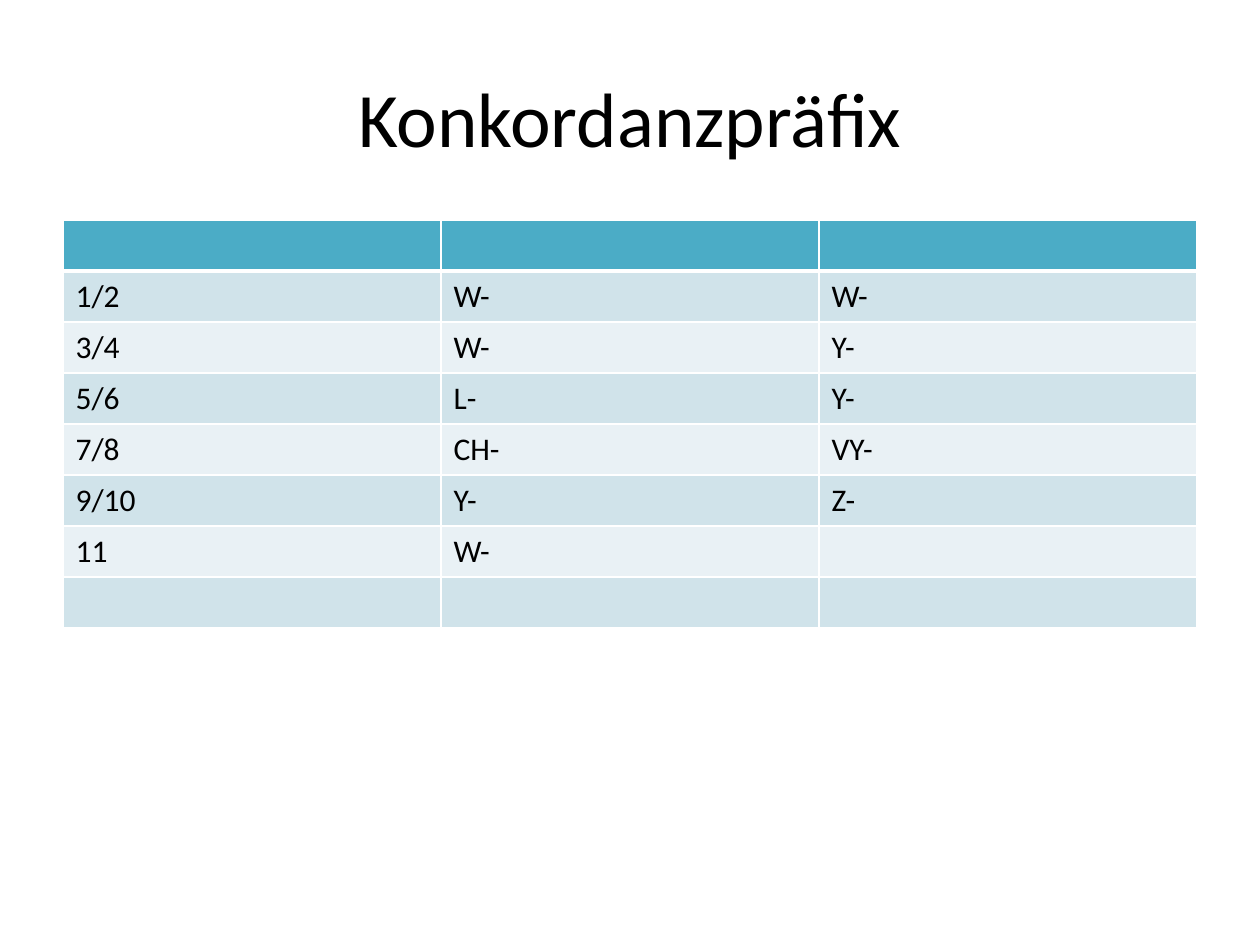
"""Build the slide "Konkordanzpräfix" with its table of concord prefixes."""
from lxml.etree import SubElement
from pptx import Presentation
from pptx.dml.color import RGBColor
from pptx.enum.text import MSO_ANCHOR, PP_ALIGN
from pptx.oxml.ns import qn
from pptx.util import Pt

PX = 914400 / 126


def write(frame, text, size=18, color="000000", align=PP_ALIGN.LEFT):
    paragraph = frame.paragraphs[0]
    paragraph.alignment = align
    run = paragraph.add_run()
    run.text = text
    run.font.name = "Calibri"
    run.font.size = Pt(size)
    run.font.bold = False
    run.font.color.rgb = RGBColor.from_string(color)


def border(cell, side, width, color="FFFFFF"):
    line = SubElement(cell._tc.get_or_add_tcPr(), qn(f"a:ln{side}"), w=str(Pt(width)))
    SubElement(SubElement(line, qn("a:solidFill")), qn("a:srgbClr"), val=color)


prefixes = [
    ("", "", ""),
    ("1/2", "W-", "W-"),
    ("3/4", "W-", "Y-"),
    ("5/6", "L-", "Y-"),
    ("7/8", "CH-", "VY-"),
    ("9/10", "Y-", "Z-"),
    ("11", "W-", ""),
    ("", "", ""),
]
bands = ["E9F1F5", "D0E3EA"]
row_height = 51

prs = Presentation()
prs.slide_width, prs.slide_height = round(1260 * PX), round(945 * PX)
slide = prs.slides.add_slide(prs.slide_layouts[6])

heading = slide.shapes.add_textbox(*(round(v * PX) for v in (63, 38, 1134, 158))).text_frame
heading.word_wrap = True
heading.vertical_anchor = MSO_ANCHOR.MIDDLE
write(heading, "Konkordanzpräfix", size=44, align=PP_ALIGN.CENTER)

table_box = [round(v * PX) for v in (63, 220, 1134, row_height * len(prefixes))]
concords = slide.shapes.add_table(len(prefixes), 3, *table_box).table
for r, entries in enumerate(prefixes):
    concords.rows[r].height = round(row_height * PX)
    for c, entry in enumerate(entries):
        cell = concords.cell(r, c)
        border(cell, "L", 1)
        border(cell, "R", 1)
        border(cell, "T", 3 if r == 1 else 1)
        border(cell, "B", 3 if r == 0 else 1)
        cell.fill.solid()
        cell.fill.fore_color.rgb = RGBColor.from_string(bands[r % 2] if r else "4BACC6")
        if entry:
            write(cell.text_frame, entry)

prs.save("out.pptx")
